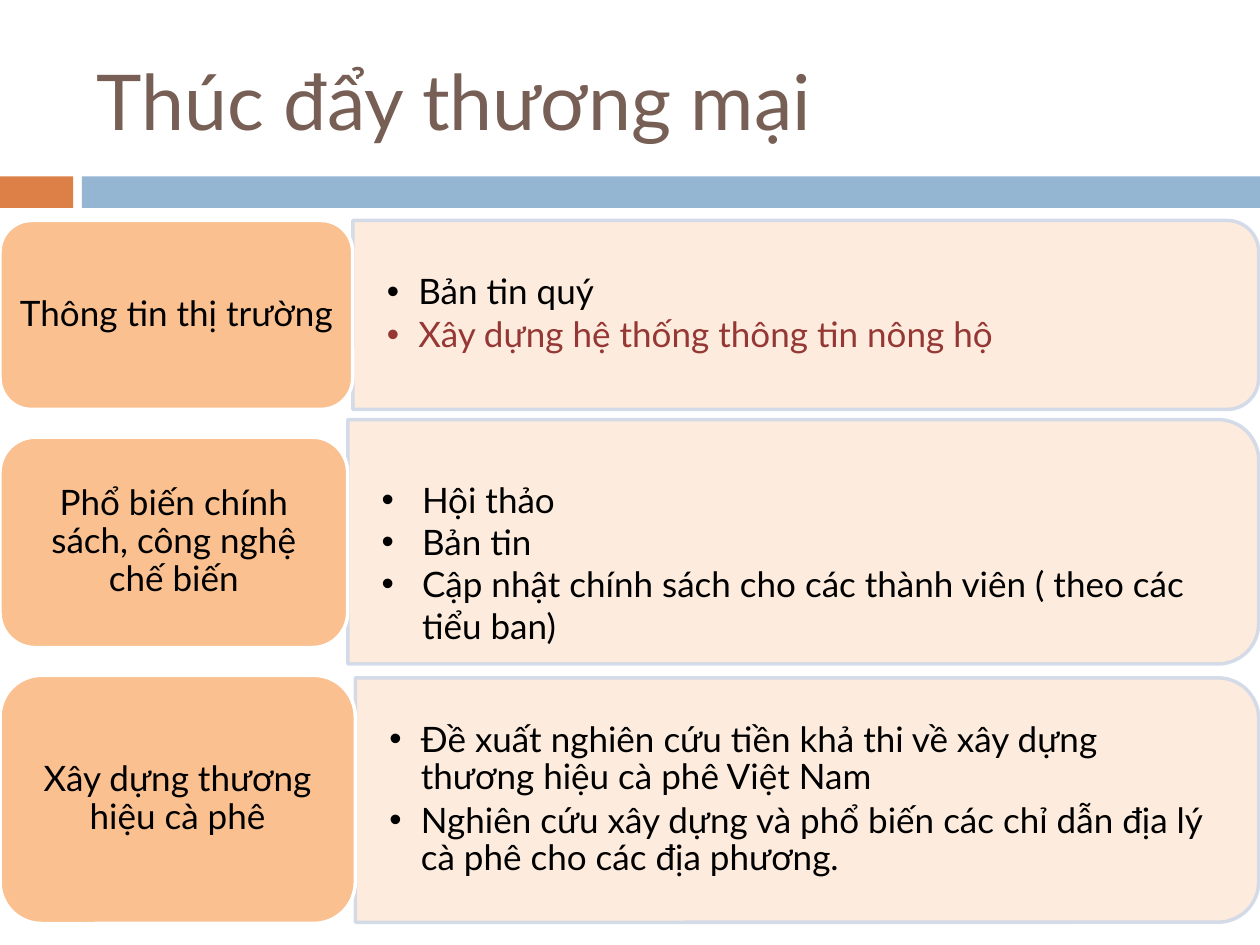
"""Build the trade promotion slide."""
from lxml import etree
from pptx import Presentation
from pptx.dml.color import RGBColor
from pptx.enum.shapes import MSO_SHAPE
from pptx.enum.text import MSO_ANCHOR, PP_ALIGN
from pptx.oxml.ns import qn
from pptx.util import Inches, Pt

RECT = MSO_SHAPE.RECTANGLE
ROUND = MSO_SHAPE.ROUNDED_RECTANGLE
TAB = MSO_SHAPE.ROUND_2_SAME_RECTANGLE
MIDDLE = MSO_ANCHOR.MIDDLE
LEFT, CENTER = PP_ALIGN.LEFT, PP_ALIGN.CENTER
FONT, BLACK, RED = "Lato", "000000", "953735"
WIDTH = 10
INSET = 0.05

TITLE = "Thúc đẩy thương mại"
BARS = [(0, 0.58, "DD8047"), (0.65, 9.35, "94B6D2")]
ROWS = [
    dict(label="Thông tin thị trường", split=2.8, tag=(1.75, 1.5), body=(1.75, 1.5),
         items=[("Bản tin quý", BLACK), ("Xây dựng hệ thống thông tin nông hộ", RED)],
         indent=0.25, space=0.9, after=3, top=0.14),
    dict(label="Phổ biến chính sách, công nghệ chế biến", split=2.76,
         tag=(3.47, 1.67), body=(3.33, 1.94),
         items=[("Hội thảo", BLACK), ("Bản tin", BLACK),
                ("Cập nhật chính sách cho các thành viên ( theo các tiểu ban)", BLACK)],
         indent=0.32, space=1.0, after=0, top=0.47),
    dict(label="Xây dựng thương hiệu cà phê", split=2.82, tag=(5.36, 1.97), body=(5.38, 1.94),
         items=[("Đề xuất nghiên cứu tiền khả thi về xây dựng thương hiệu cà phê Việt Nam", BLACK),
                ("Nghiên cứu xây dựng và phổ biến các chỉ dẫn địa lý cà phê cho các địa phương.",
                 BLACK)],
         indent=0.25, space=0.9, after=3, top=0.14),
]


def color(text):
    return RGBColor.from_string(text)


def fade(fill):
    node = fill._xPr.find(qn("a:solidFill"))[0]
    etree.SubElement(node, qn("a:alpha")).set("val", "90000")


def add_box(slide, kind, area, fill, line=None, clear=False):
    box = slide.shapes.add_shape(kind, *map(Inches, area))
    box.shadow.inherit = False
    box.fill.solid()
    box.fill.fore_color.rgb = color(fill)
    if line:
        box.line.color.rgb = color(line)
        box.line.width = Pt(2)
    else:
        box.line.fill.background()
    if clear:
        fade(box.fill)
        fade(box.line.fill)
    return box


def add_text(slide, area, items, size, align=LEFT, pad=(0.1, 0.05, 0.1, 0.05),
             space=1.0, after=0, indent=0):
    frame = slide.shapes.add_textbox(*map(Inches, area)).text_frame
    frame.word_wrap = True
    frame.vertical_anchor = MIDDLE
    (frame.margin_left, frame.margin_top,
     frame.margin_right, frame.margin_bottom) = map(Inches, pad)
    frame.text = "\n".join(text for text, _ in items)
    for para, (_, tone) in zip(frame.paragraphs, items):
        para.alignment = align
        para.line_spacing = space
        para.space_after = Pt(after)
        font = para.runs[0].font
        font.name, font.size = FONT, Pt(size)
        font.color.rgb = color(tone)
        if indent:
            para.level = 1
            props = para._p.get_or_add_pPr()
            props.set("marL", str(Inches(indent)))
            props.set("indent", str(-Inches(indent)))
            etree.SubElement(props, qn("a:buFont")).set("typeface", "Arial")
            etree.SubElement(props, qn("a:buChar")).set("char", "•")


def add_row(slide, row):
    split = row["split"]
    wide = WIDTH - split - 0.01
    top, high = row["body"]
    gap = INSET * high
    mid_x, mid_y = split + wide / 2, top + high / 2
    tab = add_box(slide, TAB, (mid_x - high / 2, mid_y - wide / 2, high, wide),
                  "FDEADA", "D0D8E8", clear=True)
    tab.rotation = 90
    add_text(slide, (split, top + gap, wide - gap, high - 2 * gap), row["items"], 20,
             pad=(0.27, row["top"], 0.27, 0.14), space=row["space"],
             after=row["after"], indent=row["indent"])
    top, high = row["tag"]
    gap = INSET * high
    add_box(slide, ROUND, (0, top, split, high), "FAC090", "FFFFFF")
    add_text(slide, (gap, top + gap, split - 2 * gap, high - 2 * gap),
             [(row["label"], BLACK)], 20, CENTER, (0.08, 0.04, 0.08, 0.04), 0.9, 7)


def main():
    deck = Presentation()
    deck.slide_width, deck.slide_height = Inches(WIDTH), Inches(7.5)
    slide = deck.slides.add_slide(deck.slide_layouts[6])
    for left, wide, fill in BARS:
        add_box(slide, RECT, (left, 1.4, wide, 0.25), fill)
    add_text(slide, (0.67, 0.25, 8.92, 1.08), [(TITLE, "775F55")], 44)
    for row in ROWS:
        add_row(slide, row)
    deck.save("out.pptx")


if __name__ == "__main__":
    main()
